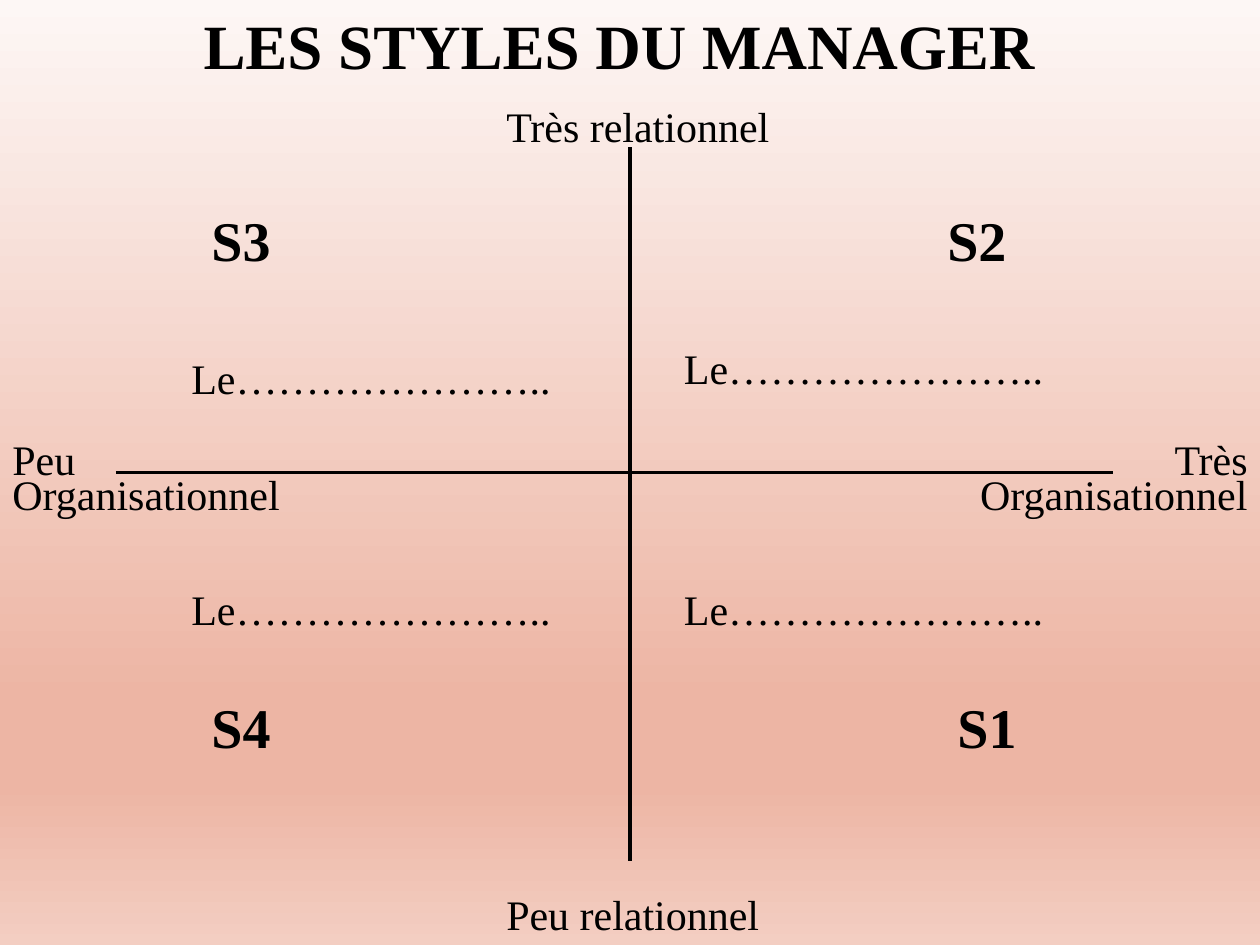
"""Builds the slide on the four styles of a manager."""
from copy import deepcopy
from dataclasses import dataclass

from pptx import Presentation
from pptx.dml.color import RGBColor
from pptx.enum.shapes import MSO_CONNECTOR
from pptx.enum.text import MSO_ANCHOR, MSO_AUTO_SIZE, PP_ALIGN
from pptx.oxml.ns import qn
from pptx.oxml.xmlchemy import OxmlElement
from pptx.util import Inches, Pt

STRAIGHT = MSO_CONNECTOR.STRAIGHT
TOP = MSO_ANCHOR.TOP
GROW = MSO_AUTO_SIZE.SHAPE_TO_FIT_TEXT
LEFT, CENTER, RIGHT = PP_ALIGN.LEFT, PP_ALIGN.CENTER, PP_ALIGN.RIGHT
TITLE_ONLY = 5


@dataclass(frozen=True)
class Theme:
    """Colours, font and sizes of the slide."""
    font: str = "Times New Roman"
    ink: str = "000000"
    title: int = 36
    style: int = 32
    body: int = 24
    axis: float = 2.25
    backdrop: tuple = ((0, "FDF7F5"), (0.74, "EDB5A4"), (0.83, "EDB5A4"), (1, "F3CEC2"))


def write(sp, text, theme, size, bold=False, align=LEFT, spacing=1.0):
    """Put one formatted paragraph into a shape."""
    tf = sp.text_frame
    tf.word_wrap = True
    tf.auto_size = GROW
    tf.vertical_anchor = TOP
    p = tf.paragraphs[0]
    p.alignment = align
    p.line_spacing = spacing
    p.space_before = Pt(0)
    r = p.add_run()
    r.text = text
    r.font.name = theme.font
    r.font.size = Pt(size)
    r.font.bold = bold
    r.font.color.rgb = RGBColor.from_string(theme.ink)


class Builder:
    """Holds the theme and the current slide."""

    def __init__(self, slide, theme):
        self.s = slide
        self.theme = theme

    def background(self):
        """Fill the slide from top to bottom with the theme's gradient."""
        fill = self.s.background.fill
        fill.gradient()
        fill.gradient_angle = 270
        stops = self.s.element.find(".//" + qn("a:gsLst"))
        while len(stops) < len(self.theme.backdrop):
            stops.append(deepcopy(stops[0]))
        for stop, (position, color) in zip(fill.gradient_stops, self.theme.backdrop):
            stop.position = position
            stop.color.rgb = RGBColor.from_string(color)

    def title(self, text, x, y, w, h):
        """Place and fill the title placeholder."""
        sp = self.s.shapes.title
        sp.left, sp.top, sp.width, sp.height = map(Inches, (x, y, w, h))
        write(sp, text, self.theme, self.theme.title, bold=True, align=CENTER)

    def text(self, text, x, y, w, h, size=None, **fmt):
        """Add a text box."""
        sp = self.s.shapes.add_textbox(*map(Inches, (x, y, w, h)))
        write(sp, text, self.theme, size or self.theme.body, **fmt)

    def axis(self, x1, y1, x2, y2):
        """Add a straight axis line."""
        sp = self.s.shapes.add_connector(STRAIGHT, *map(Inches, (x1, y1, x2, y2)))
        sp.line.color.rgb = RGBColor.from_string(self.theme.ink)
        sp.line.width = Pt(self.theme.axis)
        sp.element.spPr.append(OxmlElement("a:effectLst"))


def main():
    """Build and save the slide."""
    prs = Presentation()
    prs.slide_width, prs.slide_height = Inches(10), Inches(7.5)
    theme = Theme()
    b = Builder(prs.slides.add_slide(prs.slide_layouts[TITLE_ONLY]), theme)

    b.background()
    b.title("LES STYLES DU MANAGER", 0.5, 0, 8.83, 0.7)
    b.axis(5, 1.17, 5, 6.83)
    b.axis(0.92, 3.75, 8.83, 3.75)

    for text, x, align in (("Très Organisationnel", 7.58, RIGHT),
                           ("Peu Organisationnel", 0, LEFT)):
        b.text(text, x, 3.5, 2.42, 0.66, align=align, spacing=0.7)
    for text, y in (("Très relationnel", 0.75), ("Peu relationnel", 7)):
        b.text(text, 3.92, y, 2.33, 0.5)

    for name, x, y in (("S1", 7.5, 5.45), ("S2", 7.42, 1.58),
                       ("S3", 1.58, 1.58), ("S4", 1.58, 5.45)):
        b.text(name, x, y, 0.92, 0.63, size=theme.style, bold=True)
    for x, y in ((1.42, 2.75), (5.33, 2.67), (1.42, 4.58), (5.33, 4.58)):
        b.text("Le…………………..", x, y, 3.08, 0.5)

    prs.save("out.pptx")


if __name__ == "__main__":
    main()
